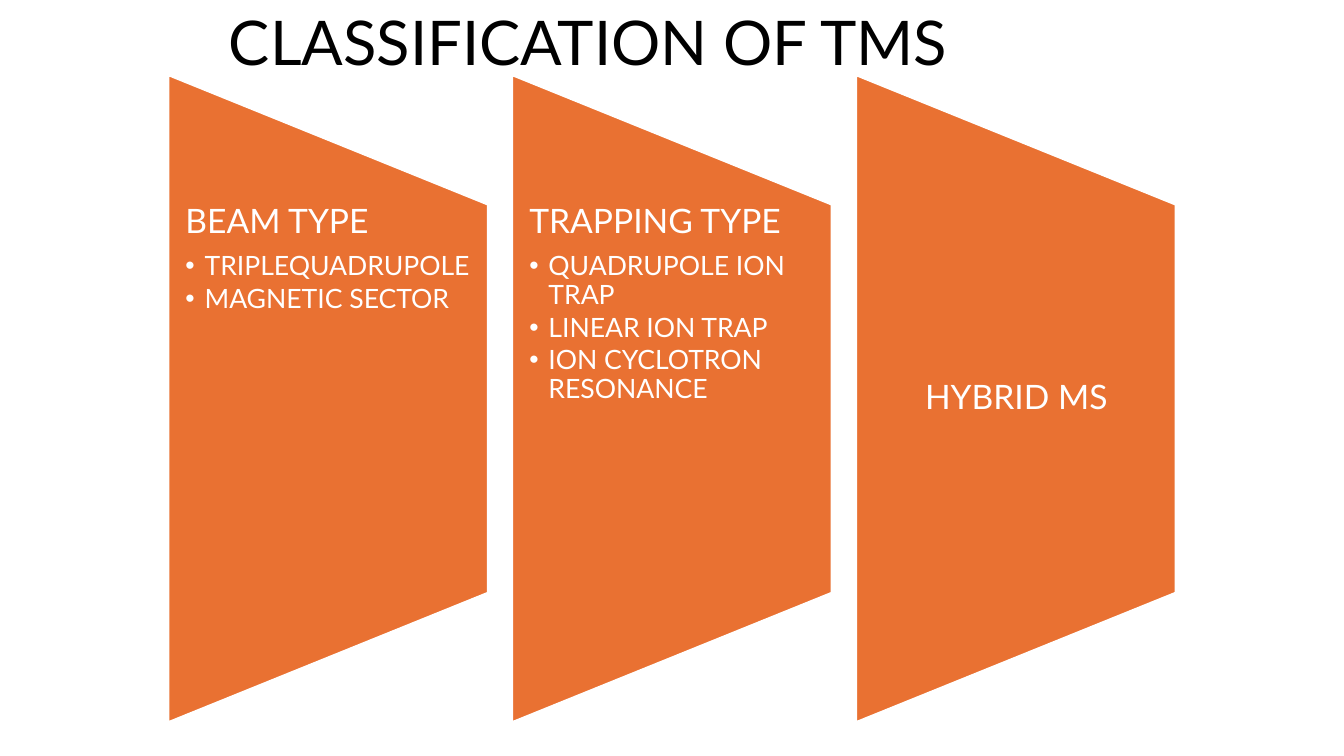
from lxml import etree
from pptx import Presentation
from pptx import util as u
from pptx.dml.color import RGBColor
from pptx.enum import shapes, text
from pptx.oxml.ns import qn

FONT = "Lato"
ORANGE, WHITE, BLACK = "E97132", "FFFFFF", "000000"

PANEL_LEFT, PANEL_PITCH = 1.67, 3.41
PANEL_WIDTH, PANEL_HEIGHT, PANEL_MIDDLE = 3.17, 6.42, 3.955
LABEL_HEIGHT = 3.85

PANELS = [
    ("BEAM TYPE", ["TRIPLEQUADRUPOLE", "MAGNETIC SECTOR"]),
    ("TRAPPING TYPE", ["QUADRUPOLE ION TRAP", "LINEAR ION TRAP",
                       "ION CYCLOTRON RESONANCE"]),
    ("HYBRID MS", []),
]


def colour(value):
    return RGBColor.from_string(value)


def write(para, words, size, color=WHITE, align=text.PP_ALIGN.LEFT, after=0):
    para.alignment = align
    para.line_spacing = 0.9
    para.space_before = u.Pt(0)
    para.space_after = u.Pt(after)
    span = para.add_run()
    span.text = words
    span.font.name = FONT
    span.font.size = u.Pt(size)
    span.font.color.rgb = colour(color)


def add_bullet(para):
    para.level = 1
    properties = para._p.get_or_add_pPr()
    properties.set("marL", str(u.Inches(0.19)))
    properties.set("indent", str(-u.Inches(0.19)))
    etree.SubElement(properties, qn("a:buFont"), typeface="Arial")
    etree.SubElement(properties, qn("a:buChar"), char="•")


def add_title(page, words):
    title = page.shapes.title
    title.left, title.top = u.Inches(2.17), u.Inches(-0.17)
    title.width, title.height = u.Inches(9), u.Inches(1.25)
    frame = title.text_frame
    frame.auto_size = text.MSO_AUTO_SIZE.NONE
    frame.vertical_anchor = text.MSO_ANCHOR.MIDDLE
    write(frame.paragraphs[0], words, 44, BLACK)


def add_trapezoid(page, left):
    """Draw the panel outline, a wide shape turned to stand on its side."""
    panel = page.shapes.add_shape(
        shapes.MSO_SHAPE.FLOWCHART_MANUAL_OPERATION,
        u.Inches(left + (PANEL_WIDTH - PANEL_HEIGHT) / 2),
        u.Inches(PANEL_MIDDLE - PANEL_WIDTH / 2),
        u.Inches(PANEL_HEIGHT), u.Inches(PANEL_WIDTH))
    panel.rotation = 270
    panel.shadow.inherit = False
    panel.fill.solid()
    panel.fill.fore_color.rgb = colour(ORANGE)
    panel.line.color.rgb = colour(WHITE)
    panel.line.width = u.Pt(1.5)


def add_label(page, left, heading, items):
    """Write a heading with its bullets, or centre a heading that has none."""
    box = page.shapes.add_textbox(
        u.Inches(left), u.Inches(PANEL_MIDDLE - LABEL_HEIGHT / 2),
        u.Inches(PANEL_WIDTH), u.Inches(LABEL_HEIGHT))
    frame = box.text_frame
    frame.word_wrap = True
    frame.margin_left, frame.margin_right = u.Inches(0.17), u.Inches(0.16)
    frame.margin_top = frame.margin_bottom = 0
    frame.vertical_anchor = text.MSO_ANCHOR.TOP if items else text.MSO_ANCHOR.MIDDLE
    align = text.PP_ALIGN.LEFT if items else text.PP_ALIGN.CENTER
    write(frame.paragraphs[0], heading, 24, align=align, after=8.4)
    for item in items:
        para = frame.add_paragraph()
        write(para, item, 19, after=2.85)
        add_bullet(para)


def main():
    deck = Presentation()
    deck.slide_width, deck.slide_height = u.Inches(13.33), u.Inches(7.5)
    page = deck.slides.add_slide(deck.slide_layouts.get_by_name("Title Only"))
    for index, (heading, items) in enumerate(PANELS):
        left = PANEL_LEFT + index * PANEL_PITCH
        add_trapezoid(page, left)
        add_label(page, left, heading, items)
    add_title(page, "CLASSIFICATION OF TMS")
    deck.save("out.pptx")


if __name__ == "__main__":
    main()
